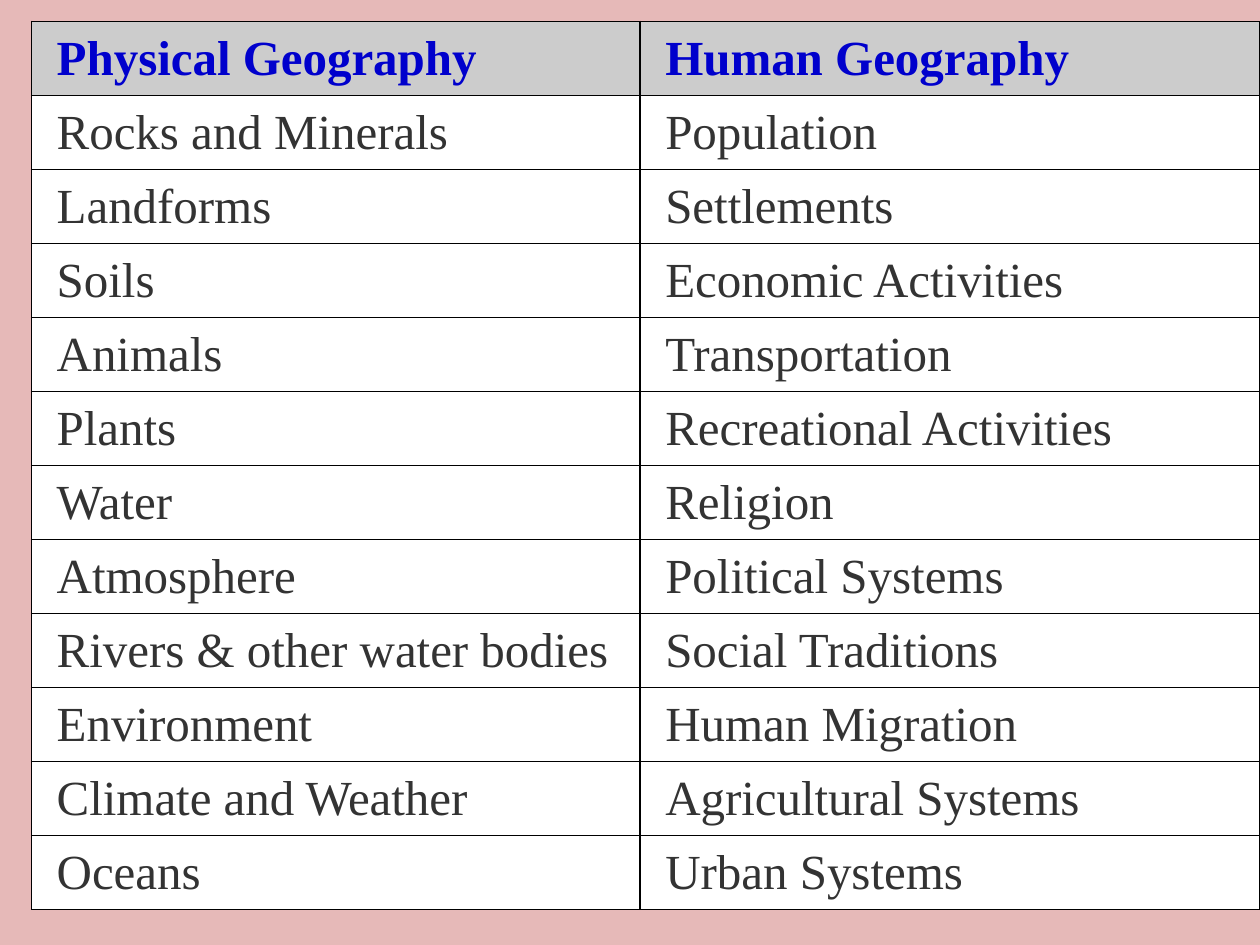
from lxml import etree
from pptx import Presentation
from pptx.dml.color import RGBColor
from pptx.enum.text import MSO_ANCHOR
from pptx.oxml.ns import qn
from pptx.util import Inches, Pt

MIDDLE = MSO_ANCHOR.MIDDLE
PINK = RGBColor(0xE6, 0xB9, 0xB8)
GREY = RGBColor(0xCC, 0xCC, 0xCC)
WHITE = RGBColor(0xFF, 0xFF, 0xFF)
BLUE = RGBColor(0x00, 0x00, 0xCC)
DARK = RGBColor(0x33, 0x33, 0x33)
BLACK = RGBColor(0x00, 0x00, 0x00)
FONT = "Times New Roman"

TOPICS = [
    ("Physical Geography", "Human Geography"),
    ("Rocks and Minerals", "Population"),
    ("Landforms", "Settlements"),
    ("Soils", "Economic Activities"),
    ("Animals", "Transportation"),
    ("Plants", "Recreational Activities"),
    ("Water", "Religion"),
    ("Atmosphere", "Political Systems"),
    ("Rivers & other water bodies", "Social Traditions"),
    ("Environment", "Human Migration"),
    ("Climate and Weather", "Agricultural Systems"),
    ("Oceans", "Urban Systems"),
]
LEFT, TOP, HEIGHT = Inches(0.25), Inches(0.17), Inches(7.05)
COL_WIDTHS = [Inches(4.83), Inches(4.92)]


def add_borders(cell):
    tcPr = cell._tc.get_or_add_tcPr()
    for i, side in enumerate(("a:lnL", "a:lnR", "a:lnT", "a:lnB")):
        ln = etree.Element(qn(side), w=str(Pt(1)))
        fill = etree.SubElement(ln, qn("a:solidFill"))
        etree.SubElement(fill, qn("a:srgbClr"), val=str(BLACK))
        tcPr.insert(i, ln)  # borders come before the cell fill


# Slide and background
prs = Presentation()
prs.slide_width, prs.slide_height = Inches(10), Inches(7.5)
s = prs.slides.add_slide(prs.slide_layouts[6])
s.background.fill.solid()
s.background.fill.fore_color.rgb = PINK

# Table grid
table = s.shapes.add_table(len(TOPICS), len(COL_WIDTHS), LEFT, TOP,
                           sum(COL_WIDTHS), HEIGHT).table
for column, width in zip(table.columns, COL_WIDTHS):
    column.width = width

# Header row and topic rows
for row, topics in enumerate(TOPICS):
    header = row == 0
    for col, topic in enumerate(topics):
        cell = table.cell(row, col)
        cell.fill.solid()
        cell.fill.fore_color.rgb = GREY if header else WHITE
        cell.vertical_anchor = MIDDLE
        cell.margin_left = Inches(0.2)
        add_borders(cell)
        r = cell.text_frame.paragraphs[0].add_run()
        r.text = topic
        r.font.name = FONT
        r.font.size = Pt(28)
        r.font.bold = header
        r.font.color.rgb = BLUE if header else DARK

prs.save("out.pptx")
